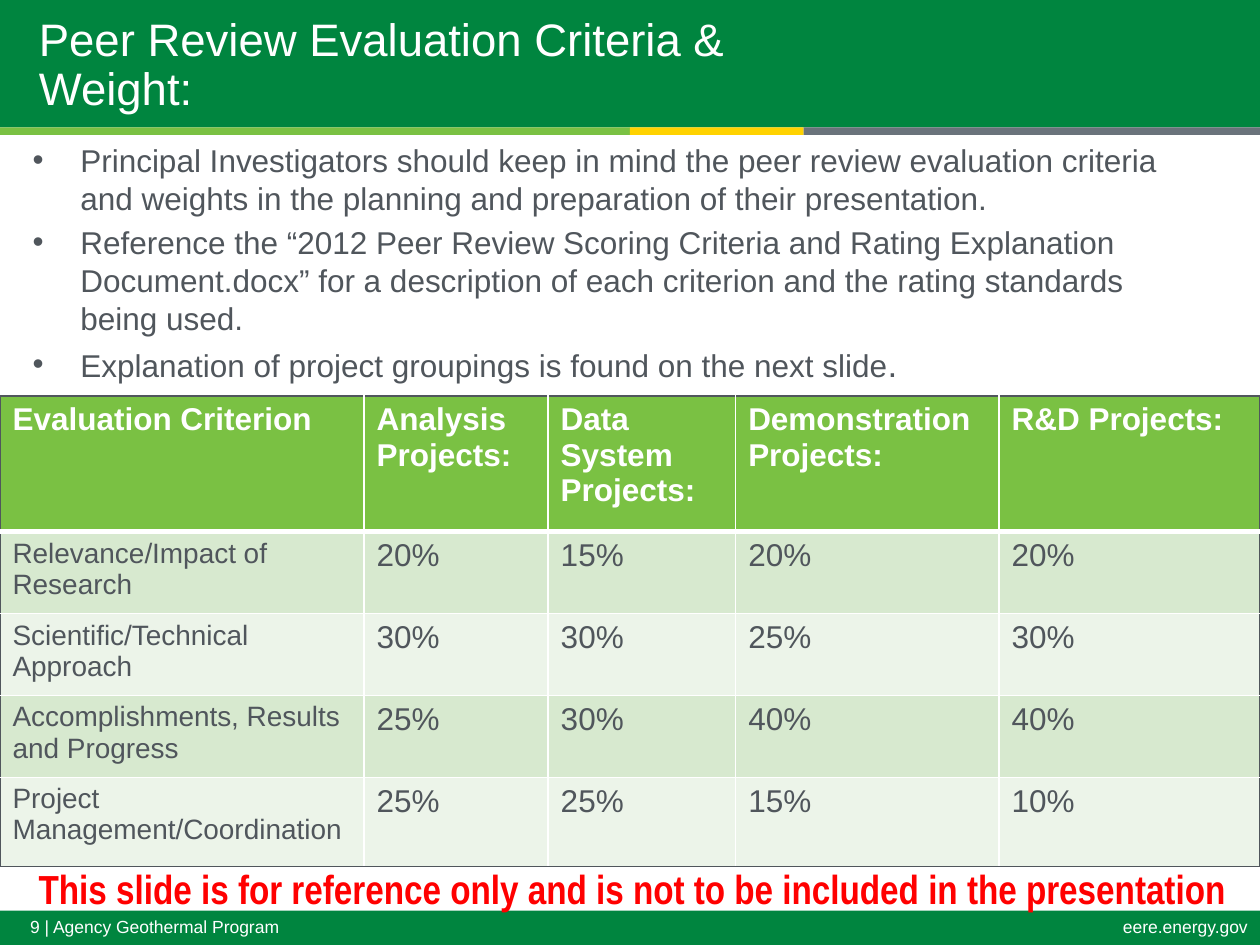
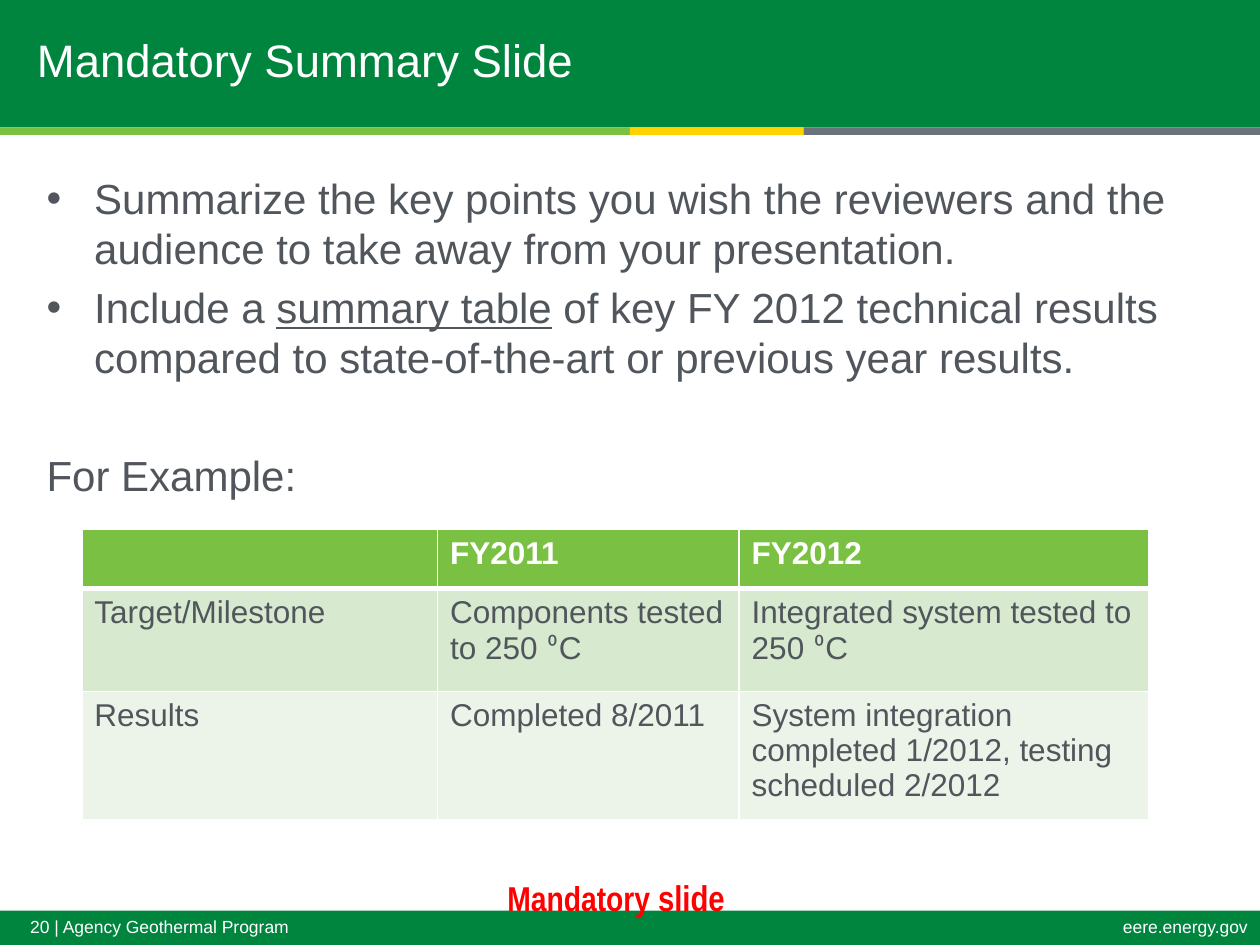
from lxml import etree
from pptx import Presentation
from pptx import util as u
from pptx.dml.color import RGBColor
from pptx.enum import shapes, text
from pptx.oxml import ns

COLORS = {
    "green": "00853F",
    "lime": "7AC143",
    "yellow": "FFD200",
    "slate": "6A737B",
    "ink": "50565C",
    "white": "FFFFFF",
    "red": "FF0000",
    "row_dark": "D7E9CF",
    "row_light": "ECF4E9",
}
FONT = "Arial"
NOTE_FONT = "Arial Narrow"
WIDTH, HEIGHT = 25.4, 19.05
BAND_HEIGHT = 2.57
STRIPES = [("lime", 12.7), ("yellow", 3.5), ("slate", 9.2)]
INDENT = 0.96


def rgb(name):
    return RGBColor.from_string(COLORS[name])


def style(font, size=None, color=None, name=None, bold=None, underline=None):
    if size:
        font.size = u.Pt(size)
    if color:
        font.color.rgb = rgb(color)
    if name:
        font.name = name
    if bold is not None:
        font.bold = bold
    if underline is not None:
        font.underline = underline


def write(para, content, **look):
    style(para.font, **{"name": FONT, **look})
    for part in [content] if isinstance(content, str) else content:
        words, changes = (part, {}) if isinstance(part, str) else part
        span = para.add_run()
        span.text = words
        style(span.font, **changes)


def add_bar(page, left, top, width, height, color):
    bar = page.shapes.add_shape(
        shapes.MSO_SHAPE.RECTANGLE, u.Cm(left), u.Cm(top), u.Cm(width), u.Cm(height)
    )
    bar.shadow.inherit = False
    bar.fill.solid()
    bar.fill.fore_color.rgb = rgb(color)
    bar.line.fill.background()


def add_box(page, left, top, width, height):
    box = page.shapes.add_textbox(u.Cm(left), u.Cm(top), u.Cm(width), u.Cm(height))
    box.text_frame.word_wrap = True
    return box.text_frame


def add_line(page, place, content, align=text.PP_ALIGN.LEFT, **look):
    para = add_box(page, *place).paragraphs[0]
    para.alignment = align
    write(para, content, **look)
    return para


def add_frame(page, number):
    footer_top = 18.36
    add_bar(page, 0, 0, WIDTH, BAND_HEIGHT, "green")
    add_bar(page, 0, footer_top, WIDTH, HEIGHT - footer_top, "green")
    left = 0
    for color, width in STRIPES:
        add_bar(page, left, BAND_HEIGHT, width, 0.15, color)
        left += width
    footers = [
        (0.36, 20.24, f"{number} | Agency Geothermal Program", text.PP_ALIGN.LEFT),
        (15.21, 10.19, "eere.energy.gov", text.PP_ALIGN.RIGHT),
    ]
    for left, width, words, align in footers:
        place = (left, 18.39, width, 0.66)
        para = add_line(page, place, words, align, size=10, color="white")
        para.line_spacing = 0.9


def set_title(page, words, left, top):
    title = page.shapes.title
    title.left, title.top = u.Cm(left), u.Cm(top)
    title.width, title.height = u.Cm(15.72), u.Cm(2.51)
    title.element.getparent().append(title.element)
    frame = title.text_frame
    frame.auto_size = text.MSO_AUTO_SIZE.NONE
    frame.vertical_anchor = text.MSO_ANCHOR.MIDDLE
    para = frame.paragraphs[0]
    para.alignment = text.PP_ALIGN.LEFT
    para.line_spacing = u.Pt(28)
    write(para, words, size=26, color="white")


def add_page(deck, number, words, left, top):
    page = deck.slides.add_slide(deck.slide_layouts.get_by_name("Title Only"))
    add_frame(page, number)
    set_title(page, words, left, top)
    return page


def set_bullet(para):
    props = para._p.get_or_add_pPr()
    props.set("marL", str(u.Cm(INDENT)))
    props.set("indent", str(-u.Cm(INDENT)))
    etree.SubElement(props, ns.qn("a:buFont"), typeface=FONT)
    etree.SubElement(props, ns.qn("a:buChar"), char="•")


def add_bullets(page, place, items, size):
    frame = add_box(page, *place)
    for index, item in enumerate(items):
        para = frame.add_paragraph() if index else frame.paragraphs[0]
        set_bullet(para)
        if index:
            para.space_before = u.Pt(size * 0.2)
        write(para, item, size=size, color="ink")
    return frame


def set_border(cell, side, color, points):
    props = cell._tc.get_or_add_tcPr()
    line = etree.SubElement(props, ns.qn(f"a:ln{side}"), w=str(u.Pt(points)))
    fill = etree.SubElement(line, ns.qn("a:solidFill"))
    etree.SubElement(fill, ns.qn("a:srgbClr"), val=COLORS[color])


def add_grid(page, left, top, widths, heights, rows, edge, label_size=18):
    last_row, last_column = len(rows) - 1, len(widths) - 1
    table = page.shapes.add_table(
        len(rows), len(widths), u.Cm(left), u.Cm(top),
        u.Cm(sum(widths)), u.Cm(sum(heights)),
    ).table
    for column, width in zip(table.columns, widths):
        column.width = u.Cm(width)
    for r, (height, row) in enumerate(zip(heights, rows)):
        table.rows[r].height = u.Cm(height)
        for c, content in enumerate(row):
            cell = table.cell(r, c)
            set_border(cell, "L", "white" if c else edge, 1)
            set_border(cell, "R", edge if c == last_column else "white", 1)
            set_border(cell, "T", "white" if r else edge, 3 if r == 1 else 1)
            set_border(cell, "B", edge if r == last_row else "white", 1 if r else 3)
            cell.fill.solid()
            band = "row_dark" if r % 2 else "row_light"
            cell.fill.fore_color.rgb = rgb(band if r else "lime")
            write(
                cell.text_frame.paragraphs[0],
                content,
                size=label_size if r and not c else 18,
                color="ink" if r else "white",
                bold=r == 0,
            )


def build_criteria(deck):
    page = add_page(deck, 9, "Peer Review Evaluation Criteria & Weight:", 0.53, 0.07)
    items = [
        "Principal Investigators should keep in mind the peer review evaluation "
        "criteria and weights in the planning and preparation of their presentation.",
        "Reference the “2012 Peer Review Scoring Criteria and Rating Explanation "
        "Document.docx” for a description of each criterion and the rating "
        "standards being used.",
        ["Explanation of project groupings is found on the next slide",
         (".", {"size": 20})],
    ]
    add_bullets(page, (0.41, 2.72, 23.37, 5.2), items, 18)
    rows = [
        ["Evaluation Criterion", "Analysis Projects:", "Data System Projects:",
         "Demonstration Projects:", "R&D Projects:"],
        ["Relevance/Impact of Research", "20%", "15%", "20%", "20%"],
        ["Scientific/Technical Approach", "30%", "30%", "25%", "30%"],
        ["Accomplishments, Results and Progress", "25%", "30%", "40%", "40%"],
        ["Project Management/Coordination", "25%", "25%", "15%", "10%"],
    ]
    widths = [7.34, 3.71, 3.78, 5.31, 5.26]
    heights = [2.74, 1.65, 1.65, 1.65, 1.8]
    add_grid(page, 0, 7.98, widths, heights, rows, "ink", label_size=16)
    add_line(
        page, (0.53, 17.3, 24.87, 1.3),
        "This slide is for reference only and is not to be included in the presentation",
        size=23.2, color="red", name=NOTE_FONT, bold=True,
    )


def build_summary(deck):
    page = add_page(deck, 20, "Mandatory Summary Slide", 0.49, 0)
    items = [
        "Summarize the key points you wish the reviewers and the audience to take "
        "away from your presentation.",
        ["Include a ", ("summary table", {"underline": True}),
         " of key FY 2012 technical results compared to state-of-the-art or "
         "previous year results."],
    ]
    frame = add_bullets(page, (0.69, 3.35, 23.44, 7), items, 24)
    example = frame.add_paragraph()
    example.space_before = u.Pt(38.5)
    write(example, "For Example:", size=24, color="ink")
    degree = ("⁰", {"name": "Calibri"})
    rows = [
        ["", "FY2011", "FY2012"],
        ["Target/Milestone",
         ["Components tested to 250 ", degree, "C"],
         ["Integrated system tested to 250 ", degree, "C"]],
        ["Results", "Completed 8/2011",
         "System integration completed 1/2012, testing scheduled 2/2012"],
    ]
    add_grid(page, 1.65, 10.67, [7.17, 6.08, 8.26], [1.19, 2.08, 2.59], rows, "white")
    add_line(
        page, (5.64, 17.53, 13.56, 0.94),
        [("Mandatory ", {"size": 19.7}), ("slide", {"size": 20.4})],
        text.PP_ALIGN.CENTER, color="red", name=NOTE_FONT, bold=True,
    )


def main():
    deck = Presentation()
    deck.slide_width, deck.slide_height = u.Cm(WIDTH), u.Cm(HEIGHT)
    build_criteria(deck)
    build_summary(deck)
    deck.save("out.pptx")


if __name__ == "__main__":
    main()
